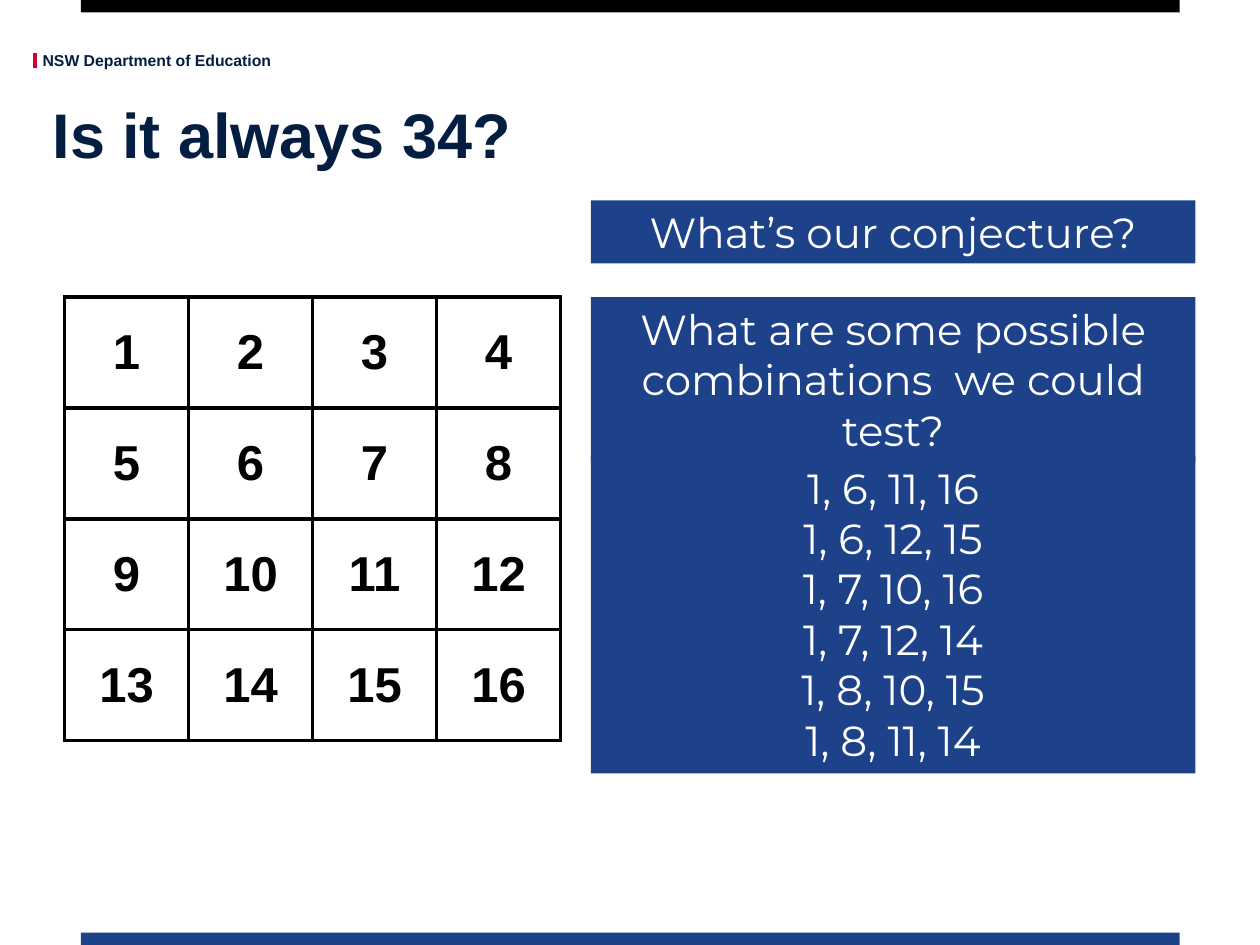
from lxml.etree import SubElement
from pptx import Presentation
from pptx.dml.color import RGBColor
from pptx.enum.shapes import MSO_CONNECTOR as CONN, MSO_SHAPE as SHAPE
from pptx.enum.text import MSO_ANCHOR as ANCHOR, MSO_AUTO_SIZE as AUTO, PP_ALIGN as ALIGN
from pptx.oxml import parse_xml
from pptx.oxml.ns import nsdecls, qn
from pptx.util import Cm, Pt

NAVY = RGBColor(0x04, 0x1E, 0x42)
BLUE = RGBColor(0x1D, 0x42, 0x8A)
RED = RGBColor(0xCE, 0x00, 0x37)
BLACK = RGBColor(0, 0, 0)
WHITE = RGBColor(0xFF, 0xFF, 0xFF)


def add_box(left, top, width, height, color):
    sp = s.shapes.add_shape(SHAPE.RECTANGLE, Cm(left), Cm(top), Cm(width), Cm(height))
    sp.shadow.inherit = False
    sp.fill.solid()
    sp.fill.fore_color.rgb = color
    sp.line.fill.background()
    return sp


def style(p, size, color, name="Arial", bold=True):
    f = p.font
    f.size, f.name, f.bold = Pt(size), name, bold
    f.color.rgb = color


prs = Presentation()
prs.slide_width, prs.slide_height = Cm(25.4), Cm(19.05)
s = prs.slides.add_slide(prs.slide_layouts[5])

# Title
title = s.shapes.title
title.left, title.top, title.width, title.height = Cm(0.81), Cm(2.08), Cm(23.95), Cm(1.4)
tf = title.text_frame
tf.text = "Is it always 34?"
tf.auto_size = AUTO.NONE
tf.vertical_anchor = ANCHOR.MIDDLE
tf.margin_left = tf.margin_right = tf.margin_top = tf.margin_bottom = Cm(0.25)
p = tf.paragraphs[0]
p.alignment = ALIGN.LEFT
p.line_spacing = 0.9
style(p, 36, NAVY)

# Department header
mark = s.shapes.add_connector(CONN.STRAIGHT, Cm(0.71), Cm(1.07), Cm(0.71), Cm(1.37))
mark.line.color.rgb = RED
mark.line.width = Pt(2.5)
SubElement(mark._element.spPr, qn("a:effectLst"))

header = s.shapes.add_textbox(Cm(0.86), Cm(1.02), Cm(4.65), Cm(0.38))
tf = header.text_frame
tf.text = "NSW Department of Education"
tf.word_wrap = False
tf.auto_size = AUTO.SHAPE_TO_FIT_TEXT
tf.margin_left = tf.margin_right = tf.margin_top = tf.margin_bottom = 0
style(tf.paragraphs[0], 9, NAVY)

# Edge bars
add_box(1.63, 0, 22.15, 0.25, BLACK)
add_box(1.63, 18.8, 22.15, 0.25, BLUE)

# Number grid
SIZE = 4
frame = s.shapes.add_table(SIZE, SIZE, Cm(1.3), Cm(5.99), Cm(10), Cm(8.94))
table = frame.table
table.first_row = table.horz_banding = False
for i in range(SIZE * SIZE):
    cell = table.cell(i // SIZE, i % SIZE)
    cell.text = str(i + 1)
    cell.vertical_anchor = ANCHOR.MIDDLE
    p = cell.text_frame.paragraphs[0]
    p.alignment = ALIGN.CENTER
    style(p, 28, BLACK)
    tcPr = cell._tc.get_or_add_tcPr()
    for side in ("lnL", "lnR", "lnT", "lnB"):
        tcPr.append(parse_xml(
            f'<a:{side} {nsdecls("a")} w="{Pt(2.25)}"><a:solidFill>'
            f'<a:srgbClr val="{BLACK}"/></a:solidFill></a:{side}>'))
    cell.fill.background()

# Question and answer boxes
combinations = ["1, 6, 11, 16", "1, 6, 12, 15", "1, 7, 10, 16",
                "1, 7, 12, 14", "1, 8, 10, 15", "1, 8, 11, 14"]
boxes = [
    (4.04, 1.27, ["What’s our conjecture?"]),
    (5.99, 3.33, ["What are some possible combinations  we could test?"]),
    (9.19, 6.4, combinations),
]
for top, height, lines in boxes:
    tf = add_box(11.91, top, 12.19, height, BLUE).text_frame
    tf.text = "\n".join(lines)
    tf.word_wrap = True
    tf.auto_size = AUTO.SHAPE_TO_FIT_TEXT
    tf.vertical_anchor = ANCHOR.TOP
    for p in tf.paragraphs:
        p.alignment = ALIGN.CENTER
        style(p, 24, WHITE, "Montserrat", False)

prs.save("out.pptx")
